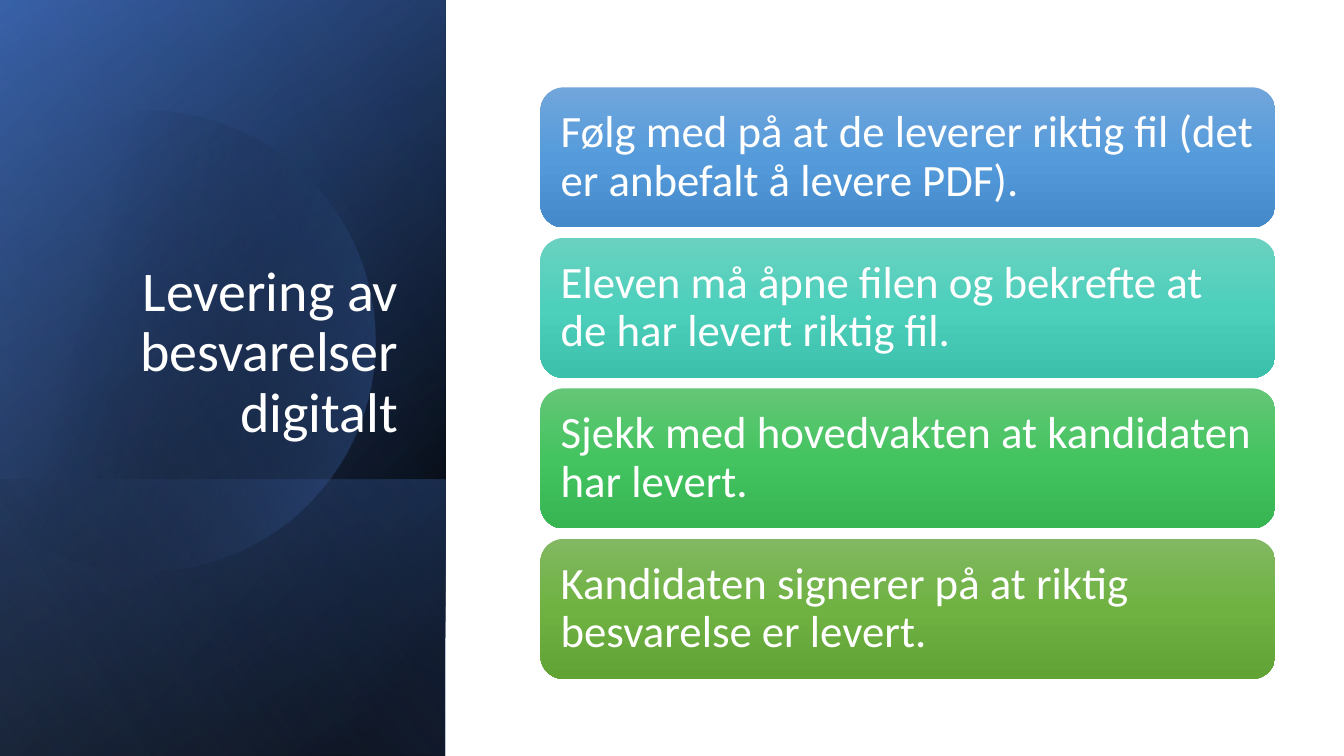
from lxml import etree
from pptx import Presentation
from pptx.dml.color import RGBColor
from pptx.enum.shapes import MSO_SHAPE as Shape
from pptx.enum.text import MSO_ANCHOR as Anchor, PP_ALIGN as Align
from pptx.oxml.ns import qn
from pptx.util import Pt

SLIDE_W, SLIDE_H = 960, 540
FONT = "Calibri"
COLORS = {
    "white": "FFFFFF", "black": "000000",
    "navy": "2F5597", "blue": "4472C4", "pale": "8FAADC",
}
CARDS = [
    ("Følg med på at de leverer riktig fil (det er anbefalt å levere PDF).",
     ("71A6DB", "559BDB", "448ACA")),
    ("Eleven må åpne filen og bekrefte at de har levert riktig fil.",
     ("6AD1C0", "4CD0BC", "3CC0AC")),
    ("Sjekk med hovedvakten at kandidaten har levert.",
     ("64C677", "44C460", "36B552")),
    ("Kandidaten signerer på at riktig besvarelse er levert.",
     ("81B861", "6FB242", "62A336")),
]
# Circle outline in inches: start, cubic curves, then the cut left side
CIRCLE_START = (1.49, 1.1)
CIRCLE_ARC = [
    ((2.46, 1.12), (3.35, 1.77), (3.63, 2.75)),
    ((3.98, 3.97), (3.28, 5.23), (2.07, 5.58)),
    ((1.31, 5.8), (0.53, 5.61), (-0.03, 5.14)),
]
CIRCLE_CUT = [(-0.15, 5.03), (-0.15, 1.75), (0, 1.61)]
CIRCLE_TOP = [
    ((0.23, 1.42), (0.5, 1.28), (0.8, 1.19)),
    ((1.03, 1.13), (1.26, 1.1), (1.49, 1.1)),
]


def set_gradient(shape, stops, angle):
    """Fill with (position %, hex colour, opacity %) stops; no line or shadow."""
    shape.shadow.inherit = False
    shape.line.fill.background()
    shape.fill.background()
    no_fill = shape._element.spPr.find(qn("a:noFill"))
    gradient = etree.Element(qn("a:gradFill"), rotWithShape="1")
    stop_list = etree.SubElement(gradient, qn("a:gsLst"))
    for position, color, opacity in stops:
        stop = etree.SubElement(stop_list, qn("a:gs"), pos=str(position * 1000))
        rgb = etree.SubElement(stop, qn("a:srgbClr"), val=color)
        if opacity < 100:
            etree.SubElement(rgb, qn("a:alpha"), val=str(opacity * 1000))
    etree.SubElement(gradient, qn("a:lin"), ang=str(angle * 60000), scaled="0")
    no_fill.getparent().replace(no_fill, gradient)


def write_text(shape, text, *, size, align, anchor, margins):
    frame = shape.text_frame
    frame.word_wrap = True
    frame.vertical_anchor = anchor
    frame.margin_left = frame.margin_right = Pt(margins[0])
    frame.margin_top = frame.margin_bottom = Pt(margins[1])
    paragraph = frame.paragraphs[0]
    paragraph.alignment = align
    paragraph.line_spacing = 0.9
    run = paragraph.add_run()
    run.text = text
    run.font.name = FONT
    run.font.size = Pt(size)
    run.font.color.rgb = RGBColor.from_string(COLORS["white"])


def add_shade(slide, box, stops, angle):
    """Cover the box with a mirrored rectangle turned a quarter."""
    left, top, width, height = box
    shade = slide.shapes.add_shape(
        Shape.RECTANGLE, Pt(left + (width - height) / 2),
        Pt(top + (height - width) / 2), Pt(height), Pt(width))
    shade.rotation = 90
    shade._element.spPr.find(qn("a:xfrm")).set("flipH", "1")
    set_gradient(shade, stops, angle)


def curve_points(start, curves, steps=24):
    points = []
    for c1, c2, end in curves:
        for step in range(1, steps + 1):
            t = step / steps
            u = 1 - t
            points.append(tuple(
                u**3 * a + 3 * u * u * t * b + 3 * u * t * t * c + t**3 * d
                for a, b, c, d in zip(start, c1, c2, end)))
        start = end
    return points


def add_circle(slide, left, top):
    outline = ([CIRCLE_START] + curve_points(CIRCLE_START, CIRCLE_ARC)
               + CIRCLE_CUT + curve_points(CIRCLE_CUT[-1], CIRCLE_TOP))
    # Hundredths of a point keep the curve even
    units = [((left + x * 72) * 100, (top + y * 72) * 100) for x, y in outline]
    builder = slide.shapes.build_freeform(*units[0], scale=Pt(1) / 100)
    builder.add_line_segments(units[1:], close=True)
    circle = builder.convert_to_shape()
    set_gradient(circle, [(29, COLORS["black"], 0), (100, COLORS["blue"], 43)], 14)


def add_sidebar(slide, box):
    left, top, width, height = box
    black, blue = COLORS["black"], COLORS["blue"]
    # Layered shades, darker band at the foot
    add_shade(slide, box, [(8, black, 100), (100, COLORS["navy"], 100)], 50)
    add_shade(slide, box, [(0, black, 0), (99, blue, 46)], 30)
    foot = 197.3
    add_shade(slide, (left, top + height - foot, width, foot),
              [(2, blue, 29), (100, black, 30)], 130)
    add_circle(slide, left, top)
    add_shade(slide, box, [(0, black, 0), (99, COLORS["pale"], 11)], 120)
    # Title
    title = slide.shapes.add_textbox(
        Pt(left + 46), Pt(top + 132.5), Pt(245.5), Pt(188.6))
    write_text(title, "Levering av besvarelser digitalt", size=40,
               align=Align.RIGHT, anchor=Anchor.BOTTOM, margins=(7.2, 3.6))


def add_cards(slide, box, gap=7.4):
    left, top, width, height = box
    card_height = (height - gap * (len(CARDS) - 1)) / len(CARDS)
    for index, (text, shades) in enumerate(CARDS):
        card = slide.shapes.add_shape(
            Shape.ROUNDED_RECTANGLE, Pt(left),
            Pt(top + index * (card_height + gap)), Pt(width), Pt(card_height))
        set_gradient(card, [(p, c, 100) for p, c in zip((0, 50, 100), shades)], 90)
        write_text(card, text, size=32, align=Align.LEFT,
                   anchor=Anchor.MIDDLE, margins=(9.6, 9.6))


def main():
    deck = Presentation()
    deck.slide_width, deck.slide_height = Pt(SLIDE_W), Pt(SLIDE_H)
    slide = deck.slides.add_slide(deck.slide_layouts[6])
    add_sidebar(slide, (0, 0, 318.2, SLIDE_H))
    add_cards(slide, (386, 62.4, 525, 422.6))
    deck.save("out.pptx")


if __name__ == "__main__":
    main()
